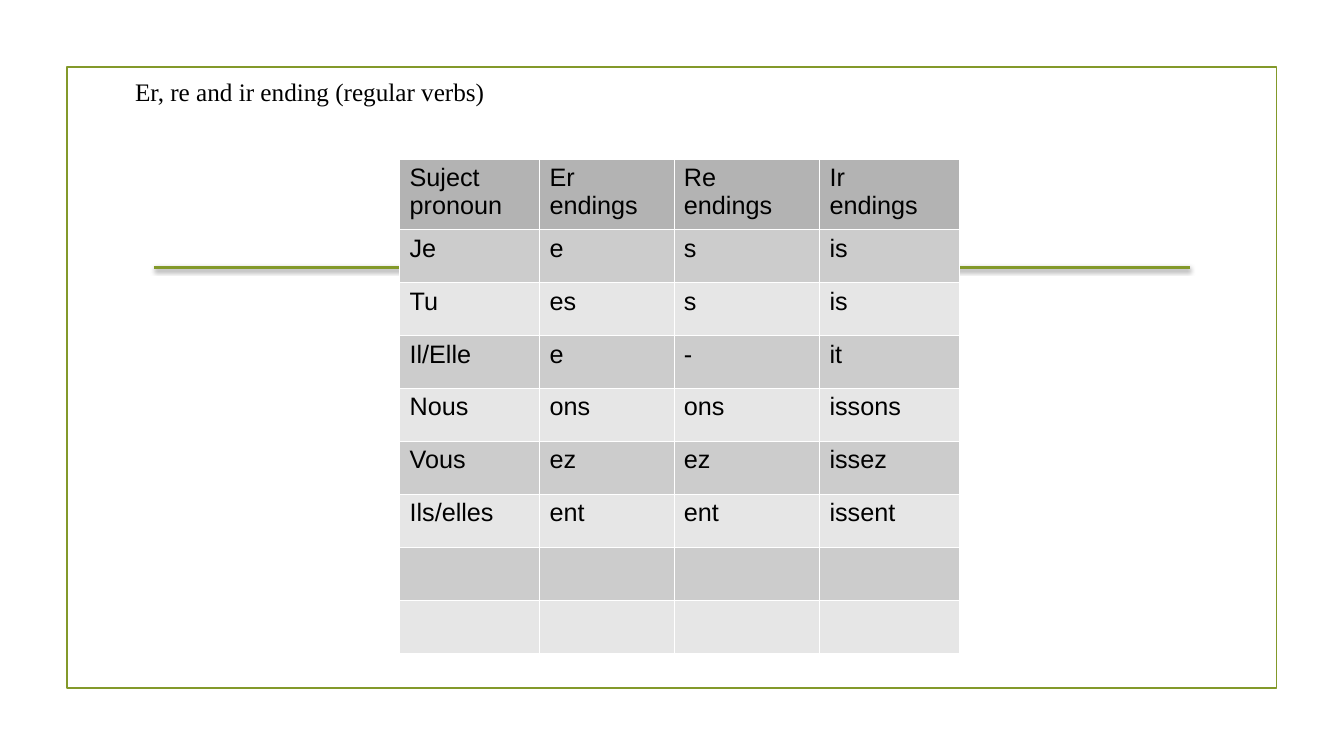
from lxml.etree import SubElement
from pptx import Presentation
from pptx.dml.color import RGBColor
from pptx.enum.shapes import MSO_CONNECTOR as Connector, MSO_SHAPE as Shape
from pptx.enum.text import MSO_ANCHOR as Anchor
from pptx.oxml import parse_xml
from pptx.oxml.ns import nsdecls, qn
from pptx.util import Pt

GREEN, BLACK, WHITE = "83992A", "000000", "FFFFFF"
HEADER_FILL, BAND_FILLS = "B3B3B3", ("CCCCCC", "E6E6E6")
COLUMN_WIDTHS = (100, 96, 104, 100)
ENDINGS = (
    ("Suject pronoun", "Er endings", "Re endings", "Ir\nendings"),
    ("Je", "e", "s", "is"),
    ("Tu", "es", "s", "is"),
    ("Il/Elle", "e", "-", "it"),
    ("Nous", "ons", "ons", "issons"),
    ("Vous", "ez", "ez", "issez"),
    ("Ils/elles", "ent", "ent", "issent"),
    ("",) * 4,
    ("",) * 4,
)


def color(hex_string):
    """Turn a hex string into a colour."""
    return RGBColor.from_string(hex_string)


def style_text(text_frame, font_name):
    """Format every run of a text frame."""
    for paragraph in text_frame.paragraphs:
        for run in paragraph.runs:
            run.font.name = font_name
            run.font.size = Pt(18)
            run.font.color.rgb = color(BLACK)


def add_frame(slide, left, top, width, height):
    """Draw the green outline around the slide content."""
    frame = slide.shapes.add_shape(Shape.RECTANGLE, Pt(left), Pt(top), Pt(width), Pt(height))
    frame.shadow.inherit = False
    frame.fill.background()
    frame.line.color.rgb = color(GREEN)
    frame.line.width = Pt(1.25)


def add_rule(slide, left, top, width):
    """Draw the horizontal green rule with its soft shadow."""
    rule = slide.shapes.add_connector(
        Connector.STRAIGHT, Pt(left), Pt(top), Pt(left + width), Pt(top))
    rule.line.color.rgb = color(GREEN)
    rule.line.width = Pt(2)
    rule._element.spPr.append(parse_xml(
        f'<a:effectLst {nsdecls("a")}>'
        f'<a:outerShdw blurRad="{Pt(3.1)}" dist="{Pt(1.6)}" dir="5400000" rotWithShape="0">'
        f'<a:srgbClr val="{BLACK}"><a:alpha val="38000"/></a:srgbClr>'
        '</a:outerShdw></a:effectLst>'))


def add_title(slide, left, top, width, height):
    """Write the slide title, centred vertically in its box."""
    title = slide.shapes.add_textbox(Pt(left), Pt(top), Pt(width), Pt(height))
    text_frame = title.text_frame
    text_frame.word_wrap = True
    text_frame.vertical_anchor = Anchor.MIDDLE
    text_frame.margin_left = text_frame.margin_right = Pt(0)
    text_frame.margin_top = text_frame.margin_bottom = Pt(0)
    text_frame.text = "Er, re and ir ending (regular verbs)"
    style_text(text_frame, "Times New Roman")


def add_borders(cell):
    """Give a cell hairline white borders on all sides."""
    properties = cell._tc.get_or_add_tcPr()
    for position, side in enumerate(("lnL", "lnR", "lnT", "lnB")):
        border = SubElement(properties, qn(f"a:{side}"), w=str(Pt(0.06)))
        properties.insert(position, border)
        fill = SubElement(border, qn("a:solidFill"))
        SubElement(fill, qn("a:srgbClr"), val=WHITE)


def add_endings_table(slide, left, top, width, height):
    """Build the banded table of verb endings."""
    table = slide.shapes.add_table(
        len(ENDINGS), len(COLUMN_WIDTHS), Pt(left), Pt(top), Pt(width), Pt(height)).table
    for column, share in zip(table.columns, COLUMN_WIDTHS):
        column.width = Pt(width * share / sum(COLUMN_WIDTHS))
    for row_index, (row, texts) in enumerate(zip(table.rows, ENDINGS)):
        row.height = Pt(height / len(ENDINGS))
        row_fill = BAND_FILLS[(row_index - 1) % 2] if row_index else HEADER_FILL
        for cell, text in zip(row.cells, texts):
            cell.fill.solid()
            cell.fill.fore_color.rgb = color(row_fill)
            add_borders(cell)
            cell.text_frame.text = text
            style_text(cell.text_frame, "Arial")
            for paragraph in cell.text_frame.paragraphs:
                for run in paragraph.runs:
                    run.font.bold = False


def main():
    """Build the slide and save it."""
    presentation = Presentation()
    presentation.slide_width, presentation.slide_height = Pt(960), Pt(540)
    slide = presentation.slides.add_slide(presentation.slide_layouts[6])
    slide.background.fill.solid()
    slide.background.fill.fore_color.rgb = color(WHITE)
    add_frame(slide, 47.8, 48, 864, 443.5)
    add_rule(slide, 110, 190.8, 740)
    add_title(slide, 96.5, 14.4, 756, 102)
    add_endings_table(slide, 285.4, 113.4, 400, 340.2)
    presentation.save("out.pptx")


if __name__ == "__main__":
    main()
